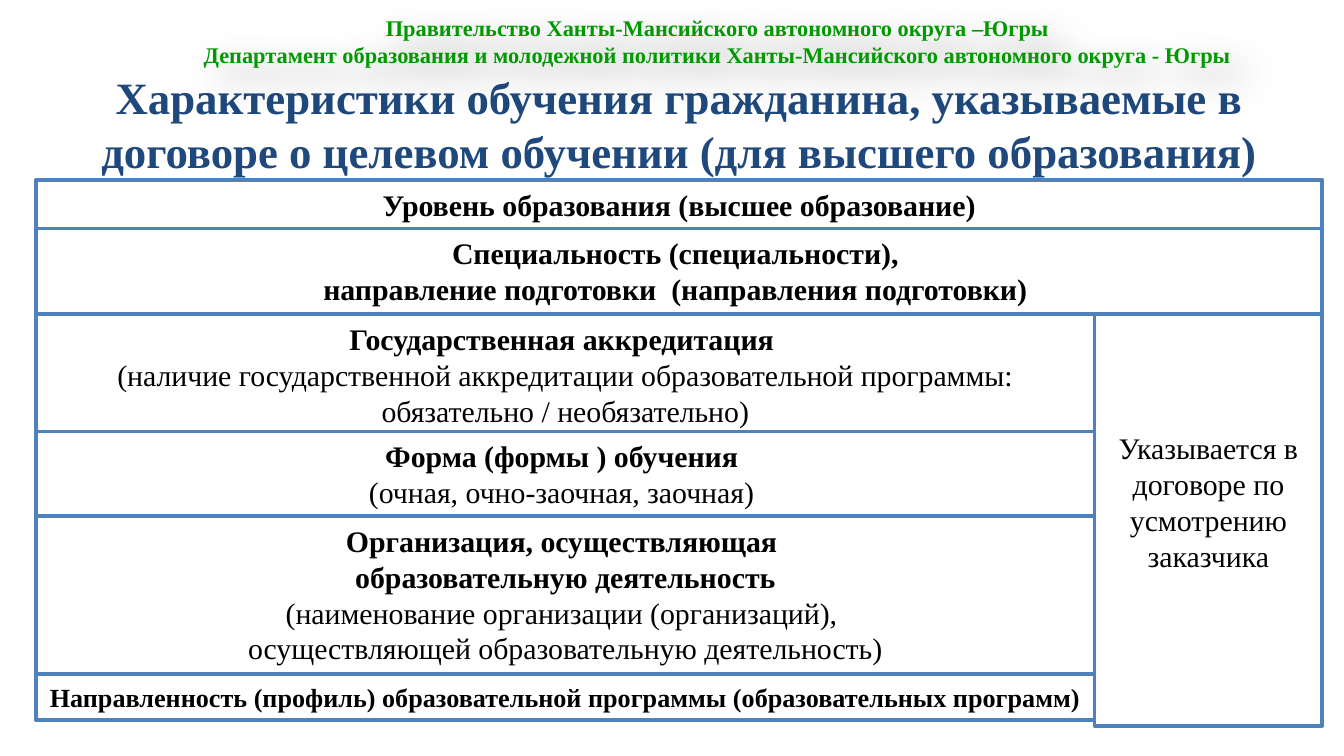
from lxml import etree
from pptx import Presentation
from pptx.dml.color import RGBColor
from pptx.enum.shapes import MSO_SHAPE
from pptx.enum.text import MSO_ANCHOR, PP_ALIGN
from pptx.oxml.ns import qn
from pptx.util import Pt

RECTANGLE = MSO_SHAPE.RECTANGLE
TOP = MSO_ANCHOR.TOP
CENTER = PP_ALIGN.CENTER

FONT = "Times New Roman"
COLORS = {
    "header": "009900",
    "title": "1F497D",
    "text": "000000",
    "fill": "FFFFFF",
    "border": "4F81BD",
}
LEFT, FULL_WIDTH, MAIN_WIDTH = 19.4, 689, 567
LINE_HEIGHT, INSET = 19.4, 3.6

# Top, bold lines, plain lines, height in text lines
FULL_ROWS = [
    (96.5, ["Уровень образования (высшее образование)"], [], 1),
    (122.4, ["Специальность (специальности), ",
             "направление подготовки  (направления подготовки) "], [], 2),
]
MAIN_ROWS = [
    (168.5, ["Государственная аккредитация "],
     ["(наличие государственной аккредитации образовательной программы: "
      "обязательно / необязательно)"], 3),
    (231.1, ["Форма (формы ) обучения "],
     ["(очная, очно-заочная, заочная) "], 2),
    (276.5, ["Организация, осуществляющая ", "образовательную деятельность"],
     ["(наименование организации (организаций), ",
      "осуществляющей образовательную деятельность)"], 4),
]


def place(shape, box):
    shape.left, shape.top, shape.width, shape.height = map(Pt, box)


def write(shape, lines, size=16, color="text", bold=False, append=False,
          top_inset=INSET):
    """Write one centred paragraph per line, after existing ones if append."""
    frame = shape.text_frame
    frame.word_wrap = True
    frame.vertical_anchor = TOP
    frame.margin_left = frame.margin_right = Pt(7.2)
    frame.margin_top, frame.margin_bottom = Pt(top_inset), Pt(INSET)
    for index, line in enumerate(lines):
        new = append or index > 0
        para = frame.add_paragraph() if new else frame.paragraphs[0]
        para.alignment = CENTER
        span = para.add_run()
        span.text = line
        span.font.name = FONT
        span.font.size = Pt(size)
        span.font.bold = bold
        span.font.color.rgb = RGBColor.from_string(COLORS[color])


def add_soft_shadow(shape):
    effects = etree.SubElement(shape._element.spPr, qn("a:effectLst"))
    shadow = etree.SubElement(
        effects, qn("a:outerShdw"), blurRad=str(Pt(20)), dist=str(Pt(10)),
        dir="2700000", algn="tl", rotWithShape="0")
    color = etree.SubElement(shadow, qn("a:srgbClr"), val="000000")
    etree.SubElement(color, qn("a:alpha"), val="40000")


def add_header(page, box):
    header = page.shapes.add_textbox(*map(Pt, box))
    write(header, [
        "Правительство Ханты-Мансийского автономного округа –Югры",
        "Департамент образования и молодежной политики "
        "Ханты-Мансийского автономного округа - Югры",
    ], size=12, color="header", bold=True)
    add_soft_shadow(header)


def set_title(page, box):
    title = page.shapes.title
    place(title, box)
    write(title, ["Характеристики обучения гражданина, указываемые в "
                  "договоре о целевом обучении (для высшего образования)"],
          size=24, color="title", bold=True)


def add_panel(page, box):
    panel = page.shapes.add_shape(RECTANGLE, *map(Pt, box))
    panel.shadow.inherit = False
    panel.fill.solid()
    panel.fill.fore_color.rgb = RGBColor.from_string(COLORS["fill"])
    panel.line.color.rgb = RGBColor.from_string(COLORS["border"])
    panel.line.width = Pt(2)
    return panel


def add_rows(page, rows, left, width):
    for top, bold_lines, plain_lines, line_count in rows:
        height = line_count * LINE_HEIGHT + 2 * INSET
        panel = add_panel(page, (left, top, width, height))
        write(panel, bold_lines, bold=True)
        write(panel, plain_lines, append=True)


def add_profile_row(page, box):
    panel = add_panel(page, box)
    write(panel, ["Направленность (профиль) образовательной программы "
                  "(образовательных программ)"], size=14, bold=True)


def add_side_note(page, box):
    panel = add_panel(page, box)
    write(panel, ["Указывается в договоре по усмотрению заказчика"],
          top_inset=INSET + 3 * LINE_HEIGHT)


def main():
    deck = Presentation()
    deck.slide_width, deck.slide_height = Pt(720), Pt(405)
    page = deck.slides.add_slide(deck.slide_layouts[5])
    add_header(page, (80, 4.3, 609, 36))
    set_title(page, (21.6, 34, 684, 34))
    add_rows(page, MAIN_ROWS, LEFT, MAIN_WIDTH)
    add_rows(page, FULL_ROWS, LEFT, FULL_WIDTH)
    add_profile_row(page, (LEFT, 361.4, MAIN_WIDTH, 24.5))
    add_side_note(page, (LEFT + MAIN_WIDTH, 168.5,
                         FULL_WIDTH - MAIN_WIDTH, 220.3))
    deck.save("out.pptx")


if __name__ == "__main__":
    main()
